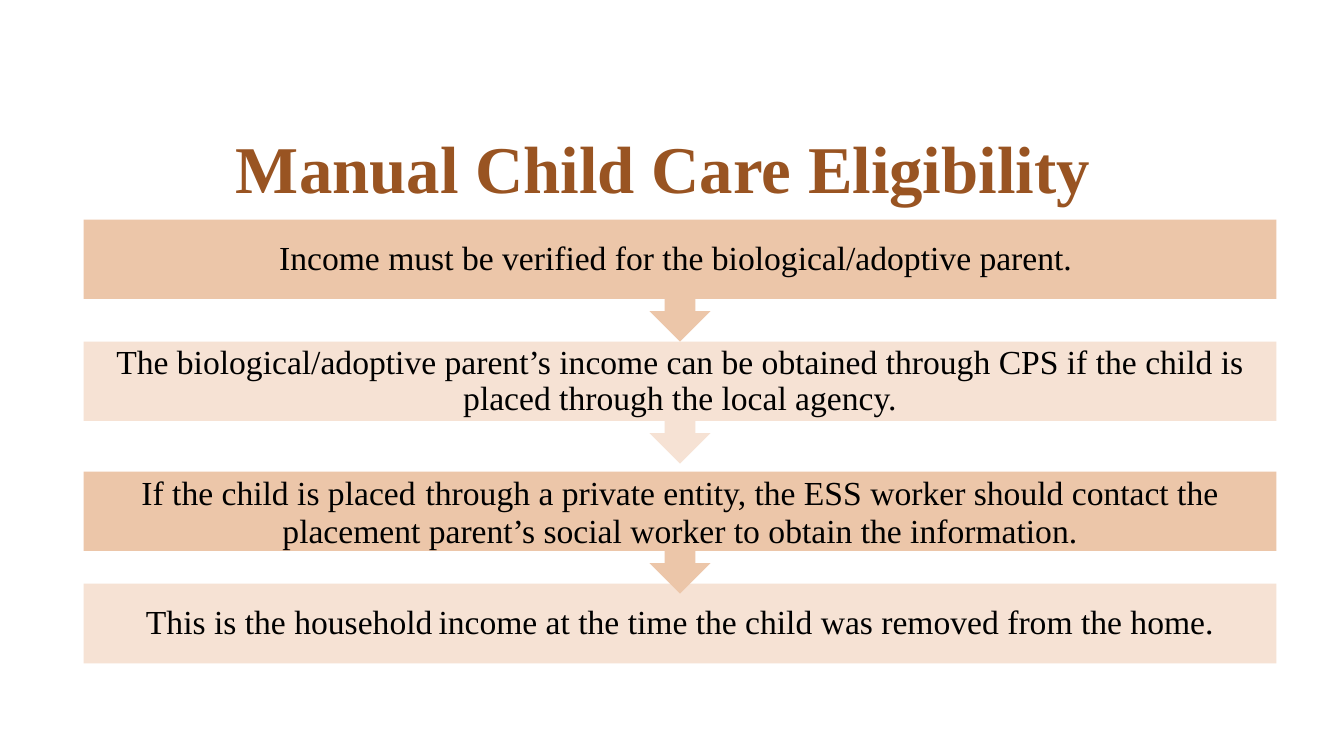
from dataclasses import dataclass

from pptx import Presentation
from pptx.dml.color import RGBColor
from pptx.enum.shapes import MSO_SHAPE as Shape
from pptx.enum.text import MSO_ANCHOR as Anchor, MSO_AUTO_SIZE as AutoSize, PP_ALIGN as Align
from pptx.util import Inches, Pt

COLORS = {"title": "995422", "dark": "ECC6A9", "light": "F6E2D4", "text": "000000"}
FONT = "Times New Roman"
LEFT, WIDTH = 0.83, 11.83
BOX_HEIGHT, CALLOUT_HEIGHT = 0.79, 1.21


@dataclass
class Step:
    top: float
    fill: str
    phrases: list[str]
    space_size: float = 24
    last: bool = False


STEPS = [
    Step(2.18, "dark", ["Income must be verified for the biological/adoptive parent. "]),
    Step(3.39, "light", ["The biological/adoptive parent’s income can be obtained through CPS "
                         "if the child is placed through the local agency."]),
    Step(4.68, "dark", ["If the child is placed", " ",
                        "through a private entity, the ESS worker should contact the "
                        "placement parent’s social worker to obtain the information."], 28),
    Step(5.79, "light", ["This is the household", " ",
                         "income at the time the child was removed from the home."], 17, True),
]


def style_paragraph(p, size: float, color: str, bold: bool = False) -> None:
    p.alignment = Align.CENTER
    p.font.name = FONT
    p.font.size = Pt(size)
    p.font.bold = bold
    p.font.color.rgb = RGBColor.from_string(COLORS[color])


def add_title(slide, text: str) -> None:
    title = slide.shapes.title
    title.left, title.top = Inches(0.75), Inches(1.15)
    title.width, title.height = Inches(WIDTH), Inches(1)
    tf = title.text_frame
    tf.text = text
    tf.auto_size = AutoSize.NONE
    tf.vertical_anchor = Anchor.MIDDLE
    style_paragraph(tf.paragraphs[0], 47.7, "title", bold=True)


def add_step(slide, step: Step) -> None:
    kind = Shape.RECTANGLE if step.last else Shape.DOWN_ARROW_CALLOUT
    height = BOX_HEIGHT if step.last else CALLOUT_HEIGHT
    s = slide.shapes.add_shape(kind, Inches(LEFT), Inches(step.top), Inches(WIDTH), Inches(height))
    s.shadow.inherit = False
    s.fill.solid()
    s.fill.fore_color.rgb = RGBColor.from_string(COLORS[step.fill])
    s.line.fill.background()
    tf = s.text_frame
    tf.word_wrap = True
    tf.vertical_anchor = Anchor.MIDDLE
    tf.margin_left = tf.margin_right = Inches(0.19)
    tf.margin_top = tf.margin_bottom = 0
    p = tf.paragraphs[0]
    p.line_spacing = 0.9
    style_paragraph(p, 24, "text")
    for phrase in step.phrases:
        r = p.add_run()
        r.text = phrase
        if phrase == " ":
            r.font.size = Pt(step.space_size)


def main() -> None:
    prs = Presentation()
    prs.slide_width, prs.slide_height = Inches(13.33), Inches(7.5)
    slide = prs.slides.add_slide(prs.slide_layouts[5])
    add_title(slide, "Manual Child Care Eligibility ")
    for step in reversed(STEPS):
        add_step(slide, step)
    prs.save("out.pptx")


if __name__ == "__main__":
    main()
